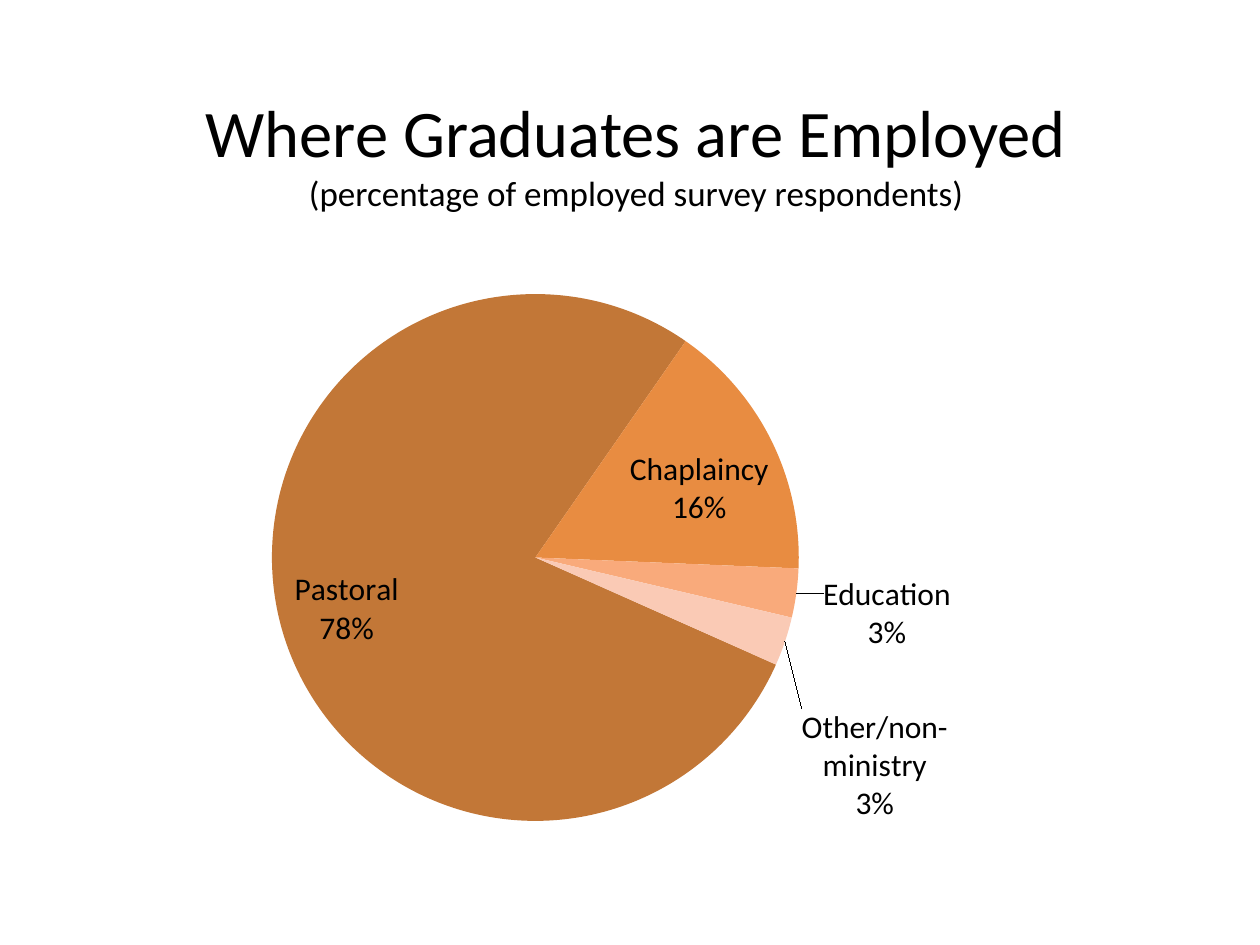
from dataclasses import dataclass

from pptx import Presentation
from pptx.chart.data import CategoryChartData
from pptx.dml.color import RGBColor
from pptx.enum.chart import XL_CHART_TYPE, XL_LABEL_POSITION
from pptx.enum.text import MSO_AUTO_SIZE, PP_ALIGN
from pptx.oxml import parse_xml
from pptx.oxml.ns import nsdecls, qn
from pptx.util import Inches, Pt

PIE = XL_CHART_TYPE.PIE
BEST_FIT = XL_LABEL_POSITION.BEST_FIT
CENTER = PP_ALIGN.CENTER
GROW = MSO_AUTO_SIZE.SHAPE_TO_FIT_TEXT

BLACK = RGBColor(0x00, 0x00, 0x00)
BROWN = RGBColor(0xC2, 0x77, 0x37)
ORANGE = RGBColor(0xE8, 0x8C, 0x41)
APRICOT = RGBColor(0xF9, 0xAA, 0x7B)
PEACH = RGBColor(0xFA, 0xCA, 0xB5)

FONT = "Calibri"
WIDTH, HEIGHT = Inches(10), Inches(7.5)
START_ANGLE = 114


@dataclass
class Area:
    """Lengths as shares of the whole they lie in."""
    left: float
    top: float
    width: float
    height: float

    def on_slide(self) -> tuple[int, int, int, int]:
        return (int(self.left * WIDTH), int(self.top * HEIGHT),
                int(self.width * WIDTH), int(self.height * HEIGHT))


@dataclass
class Slice:
    name: str
    percent: int
    color: RGBColor
    label_shift: tuple[float, float] | None = None


TITLE_AREA = Area(0.13, 0.09, 0.75, 0.14)
CHART_AREA = Area(0.09, 0.25, 0.77, 0.68)
PLOT_AREA = Area(0.16, 0.09, 0.55, 0.82)

TITLE_LINES = [("Where Graduates are Employed", 38),
               ("(percentage of employed survey respondents)", 20)]

SLICES = [
    Slice("Pastoral", 78, BROWN),
    Slice("Chaplaincy", 16, ORANGE),
    Slice("Education", 3, APRICOT, (0.02, -0.03)),
    Slice("Other/non-ministry", 3, PEACH, (0.01, 0.1)),
]


def style_font(font, size: float) -> None:
    for name, value in {"name": FONT, "size": Pt(size)}.items():
        setattr(font, name, value)
    font.color.rgb = BLACK


def add_title(page) -> None:
    box = page.shapes.add_textbox(*TITLE_AREA.on_slide())
    frame = box.text_frame
    for name, value in {"word_wrap": False, "auto_size": GROW}.items():
        setattr(frame, name, value)
    for index, (text, size) in enumerate(TITLE_LINES):
        para = frame.add_paragraph() if index else frame.paragraphs[0]
        para.alignment = CENTER
        span = para.add_run()
        span.text = text
        style_font(span.font, size)


def replace_child(parent, tag: str, child, index: int) -> None:
    for old in parent.findall(qn(tag)):
        parent.remove(old)
    parent.insert(index, child)


def place_plot(chart) -> None:
    """Fix the pie's inner plot area and the angle of its first slice."""
    plot_area = chart.plots[0]._element.getparent()
    layout = parse_xml(
        f'<c:layout {nsdecls("c")}><c:manualLayout><c:layoutTarget val="inner"/>'
        '<c:xMode val="edge"/><c:yMode val="edge"/>'
        f'<c:x val="{PLOT_AREA.left}"/><c:y val="{PLOT_AREA.top}"/>'
        f'<c:w val="{PLOT_AREA.width}"/><c:h val="{PLOT_AREA.height}"/>'
        '</c:manualLayout></c:layout>')
    replace_child(plot_area, "c:layout", layout, 0)
    pie = chart.plots[0]._element
    angle = parse_xml(f'<c:firstSliceAng {nsdecls("c")} val="{START_ANGLE}"/>')
    replace_child(pie, "c:firstSliceAng", angle, len(pie))


def shifted_label(index: int, shift: tuple[float, float]):
    """Label moved away from its usual place, tied by a leader line."""
    return parse_xml(
        f'<c:dLbl {nsdecls("c")}><c:idx val="{index}"/><c:layout><c:manualLayout>'
        f'<c:x val="{shift[0]}"/><c:y val="{shift[1]}"/>'
        '</c:manualLayout></c:layout><c:dLblPos val="bestFit"/>'
        '<c:showLegendKey val="0"/><c:showVal val="0"/><c:showCatName val="1"/>'
        '<c:showSerName val="0"/><c:showPercent val="1"/><c:showBubbleSize val="0"/>'
        '<c:separator>\n</c:separator></c:dLbl>')


def add_labels(series) -> None:
    labels = series.data_labels
    for name, value in {"show_category_name": True, "show_percentage": True,
                        "show_value": False, "position": BEST_FIT}.items():
        setattr(labels, name, value)
    style_font(labels.font, 18)
    element = labels._element
    for tag, xml in {"c:separator": "<c:separator {}>\n</c:separator>",
                     "c:showLeaderLines": '<c:showLeaderLines {} val="1"/>'}.items():
        for old in element.findall(qn("c:showLeaderLines")):
            element.remove(old)
        replace_child(element, tag, parse_xml(xml.format(nsdecls("c"))), len(element))
    moved = [(i, part.label_shift) for i, part in enumerate(SLICES) if part.label_shift]
    for place, (index, shift) in enumerate(moved):
        element.insert(place, shifted_label(index, shift))


def add_pie(page) -> None:
    data = CategoryChartData()
    data.categories = [part.name for part in SLICES]
    data.add_series("Series 1", [part.percent for part in SLICES])
    chart = page.shapes.add_chart(PIE, *CHART_AREA.on_slide(), data).chart
    for name, value in {"has_title": False, "has_legend": False}.items():
        setattr(chart, name, value)
    style_font(chart.font, 18)
    chart.plots[0].vary_by_categories = True
    series = chart.plots[0].series[0]
    for index, part in enumerate(SLICES):
        fill = series.points[index].format.fill
        fill.solid()
        fill.fore_color.rgb = part.color
    add_labels(series)
    place_plot(chart)


def main() -> None:
    deck = Presentation()
    deck.slide_width, deck.slide_height = WIDTH, HEIGHT
    page = deck.slides.add_slide(deck.slide_layouts[6])
    add_title(page)
    add_pie(page)
    deck.save("out.pptx")


if __name__ == "__main__":
    main()
